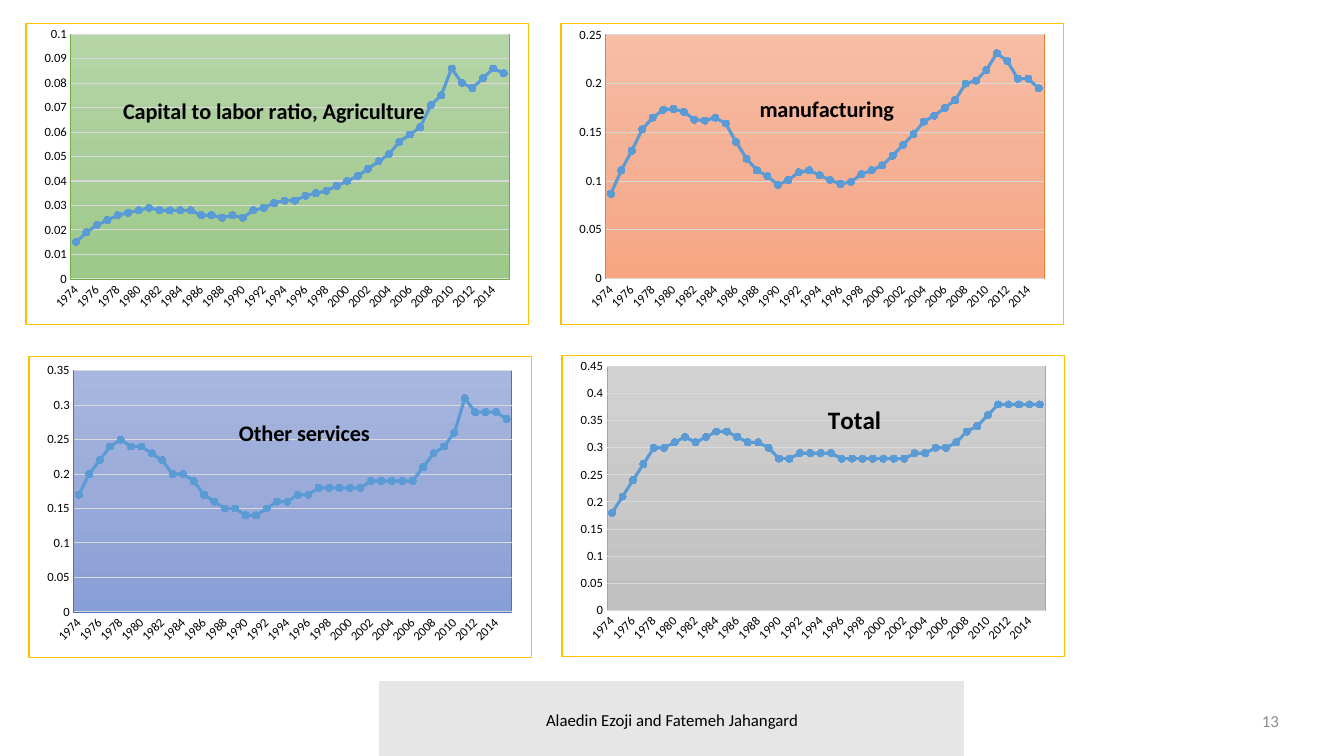
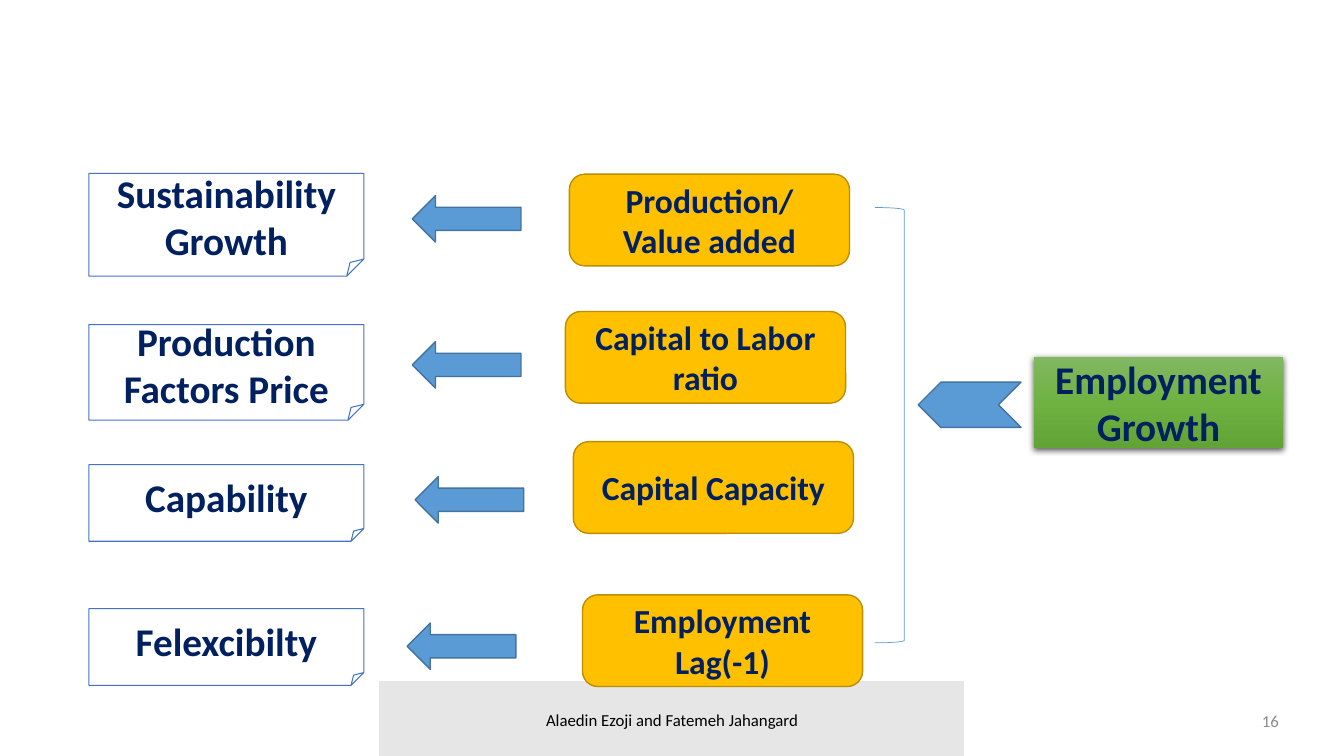
from dataclasses import dataclass

from pptx import Presentation
from pptx import util as u
from pptx.chart import data
from pptx.dml import color
from pptx.enum import chart as charts, shapes, text
from pptx.oxml import parse_xml
from pptx.oxml import ns


@dataclass(frozen=True)
class Theme:
    font: str = "Calibri"
    black: str = "000000"
    navy: str = "002060"
    grey: str = "8C8C8C"
    band: str = "E7E6E6"
    rule: str = "D9D9D9"
    white: str = "FFFFFF"
    gold: str = "FFC000"
    gold_edge: str = "BD8E00"
    blue: str = "5B9BD5"
    blue_edge: str = "43739E"
    note_edge: str = "4472C4"
    greens: tuple = ("81B861", "6FB242", "62A336")
    axis_size: int = 9
    chart_size: int = 10
    footer_size: int = 12
    factor_size: int = 24
    outcome_size: int = 28


@dataclass(frozen=True)
class Box:
    left: float
    top: float
    width: float
    height: float

    def inner(self, left, top, width, height):
        return Box(self.left + left, self.top + top, width, height)

    def lengths(self):
        return [u.Cm(side) for side in (self.left, self.top, self.width, self.height)]


@dataclass(frozen=True)
class Panel:
    title: str
    title_size: int
    title_at: tuple
    box: Box
    plot: tuple
    shades: tuple
    edge: str
    top_value: float
    step: float
    values: tuple


@dataclass(frozen=True)
class Row:
    outcome: str
    factor: str
    box: Box
    arrow_at: tuple
    factor_at: tuple


THEME = Theme()
PAGE = Box(0, 0, 33.87, 19.05)
YEARS = [str(year) for year in range(1974, 2016)]

PANELS = (
    Panel("Capital to labor ratio, Agriculture", 16, (0.185, 0.225),
          Box(0.64, 0.58, 12.7, 7.62), (0.089, 0.035, 0.872, 0.813),
          ("B5D5A7", "AACE9A", "9CC987"), "70AD47", 0.1, 0.01,
          (0.015, 0.019, 0.022, 0.024, 0.026, 0.027, 0.028, 0.029, 0.028, 0.028, 0.028,
           0.028, 0.026, 0.026, 0.025, 0.026, 0.025, 0.028, 0.029, 0.031, 0.032, 0.032,
           0.034, 0.035, 0.036, 0.038, 0.04, 0.042, 0.045, 0.048, 0.051, 0.056, 0.059,
           0.062, 0.071, 0.075, 0.086, 0.08, 0.078, 0.082, 0.086, 0.084)),
    Panel("Other services", 16, (0.41, 0.19),
          Box(0.71, 8.97, 12.7, 7.62), (0.089, 0.047, 0.872, 0.801),
          ("A8B7DF", "9AABD9", "889ED7"), "4472C4", 0.35, 0.05,
          (0.17, 0.2, 0.22, 0.24, 0.25, 0.24, 0.24, 0.23, 0.22, 0.2, 0.2, 0.19, 0.17, 0.16,
           0.15, 0.15, 0.14, 0.14, 0.15, 0.16, 0.16, 0.17, 0.17, 0.18, 0.18, 0.18, 0.18,
           0.18, 0.19, 0.19, 0.19, 0.19, 0.19, 0.21, 0.23, 0.24, 0.26, 0.31, 0.29, 0.29,
           0.29, 0.28)),
    Panel("manufacturing", 16, (0.387, 0.22),
          Box(14.12, 0.58, 12.7, 7.62), (0.089, 0.037, 0.872, 0.81),
          ("F7BDA5", "F5B196", "F8A582"), "ED7D31", 0.25, 0.05,
          (0.087, 0.111, 0.131, 0.153, 0.165, 0.173, 0.174, 0.171, 0.163, 0.162, 0.165,
           0.159, 0.14, 0.123, 0.111, 0.105, 0.096, 0.101, 0.109, 0.111, 0.106, 0.101,
           0.097, 0.099, 0.107, 0.111, 0.116, 0.126, 0.137, 0.148, 0.161, 0.167, 0.175,
           0.183, 0.2, 0.203, 0.214, 0.231, 0.223, 0.205, 0.205, 0.195)),
    Panel("Total", 18, (0.52, 0.14),
          Box(14.15, 8.94, 12.7, 7.62), (0.089, 0.037, 0.872, 0.81),
          ("D2D2D2", "C8C8C8", "C0C0C0"), "A5A5A5", 0.45, 0.05,
          (0.18, 0.21, 0.24, 0.27, 0.3, 0.3, 0.31, 0.32, 0.31, 0.32, 0.33, 0.33, 0.32, 0.31,
           0.31, 0.3, 0.28, 0.28, 0.29, 0.29, 0.29, 0.29, 0.28, 0.28, 0.28, 0.28, 0.28,
           0.28, 0.28, 0.29, 0.29, 0.3, 0.3, 0.31, 0.33, 0.34, 0.36, 0.38, 0.38, 0.38,
           0.38, 0.38)),
)

ROWS = (
    Row("Sustainability Growth", "Production/ Value added",
        Box(2.24, 4.37, 6.93, 2.59), (8.15, 0.56), (12.11, 0.02)),
    Row("Production Factors Price", "Capital to Labor ratio",
        Box(2.24, 8.18, 6.93, 2.41), (8.15, 0.43), (12.01, -0.33)),
    Row("Capability", "Capital Capacity",
        Box(2.24, 11.71, 6.93, 1.93), (8.22, 0.3), (12.21, -0.58)),
    Row("Felexcibilty", "Employment Lag(-1)",
        Box(2.24, 15.34, 6.93, 1.93), (8.02, 0.36), (12.44, -0.35)),
)


def rgb(code):
    return color.RGBColor.from_string(code)


def set_font(font, size, code, bold=False):
    font.name = THEME.font
    font.size = u.Pt(size)
    font.bold = bold
    font.color.rgb = rgb(code)


def gradient(shades):
    stops = "".join(
        f'<a:gs pos="{index * 50000}"><a:srgbClr val="{code}"/></a:gs>'
        for index, code in enumerate(shades))
    return (f'<a:gradFill {ns.nsdecls("a")} rotWithShape="1"><a:gsLst>{stops}</a:gsLst>'
            '<a:lin ang="5400000" scaled="0"/></a:gradFill>')


def frame_style(fill, edge, points):
    return parse_xml(
        f'<c:spPr {ns.nsdecls("c", "a")}>{fill}<a:ln w="{u.Pt(points)}"><a:solidFill>'
        f'<a:srgbClr val="{edge}"/></a:solidFill></a:ln></c:spPr>')


def set_layout(element, sides, target=""):
    for old in element.xpath("c:layout"):
        element.remove(old)
    modes = "".join(f'<c:{side}Mode val="edge"/>' for side in "xy")
    places = "".join(f'<c:{side} val="{value}"/>' for side, value in zip("xywh", sides))
    layout = parse_xml(f'<c:layout {ns.nsdecls("c")}><c:manualLayout>{target}{modes}{places}'
                       '</c:manualLayout></c:layout>')
    element.insert(len(element.xpath("c:tx")), layout)


def write(shape, words, size, code, bold=False, align=text.PP_ALIGN.CENTER,
          anchor=text.MSO_ANCHOR.MIDDLE):
    frame = shape.text_frame
    frame.word_wrap = True
    frame.vertical_anchor = anchor
    frame.text = words
    para = frame.paragraphs[0]
    para.alignment = align
    for span in para.runs:
        set_font(span.font, size, code, bold)


def add_block(page, kind, box, fill=None, edge=None, points=1):
    block = page.shapes.add_shape(kind, *box.lengths())
    block.shadow.inherit = False
    if fill:
        block.fill.solid()
        block.fill.fore_color.rgb = rgb(fill)
    else:
        block.fill.background()
    if edge:
        block.line.color.rgb = rgb(edge)
        block.line.width = u.Pt(points)
    else:
        block.line.fill.background()
    return block


def add_footer(page, box, number):
    add_block(page, shapes.MSO_SHAPE.RECTANGLE, box.inner(9.58, 17.17, 14.71, 2.06),
              THEME.band, THEME.band)
    authors = page.shapes.add_textbox(*box.inner(11.76, 17.75, 10.36, 0.76).lengths())
    write(authors, "Alaedin Ezoji and Fatemeh Jahangard", THEME.footer_size, THEME.black,
          anchor=text.MSO_ANCHOR.TOP)
    counter = page.shapes.add_textbox(*box.inner(31.55, 17.65, 1.37, 1.02).lengths())
    write(counter, str(number), THEME.footer_size, THEME.grey, align=text.PP_ALIGN.LEFT)


def style_axes(chart, panel):
    years, ratios = chart.category_axis, chart.value_axis
    for axis in (years, ratios):
        axis.major_tick_mark = axis.minor_tick_mark = charts.XL_TICK_MARK.NONE
        set_font(axis.tick_labels.font, THEME.axis_size, THEME.black)
    years.format.line.color.rgb = rgb(THEME.rule)
    years.format.line.width = u.Pt(0.75)
    years._element.xpath("c:txPr/a:bodyPr")[0].set("rot", "-2700000")
    skip = parse_xml(f'<c:tickLblSkip {ns.nsdecls("c")} val="2"/>')
    years._element.xpath("c:noMultiLvlLbl")[0].addprevious(skip)

    ratios.format.line.fill.background()
    ratios.has_major_gridlines = True
    ratios.major_gridlines.format.line.color.rgb = rgb(THEME.rule)
    ratios.major_gridlines.format.line.width = u.Pt(0.75)
    if not ratios._element.xpath("c:crossBetween"):
        between = parse_xml(f'<c:crossBetween {ns.nsdecls("c")} val="between"/>')
        ratios._element.xpath("c:crosses")[0].addnext(between)
    ratios.minimum_scale = 0
    ratios.maximum_scale = panel.top_value
    ratios.major_unit = panel.step
    ratios.tick_labels.number_format = "General"
    ratios.tick_labels.number_format_is_linked = False


def add_panel(page, panel):
    figures = data.CategoryChartData()
    figures.categories = YEARS
    figures.add_series("Series 1", panel.values)
    chart = page.shapes.add_chart(charts.XL_CHART_TYPE.LINE_MARKERS, *panel.box.lengths(),
                                  figures).chart
    chart.has_legend = False
    set_font(chart.font, THEME.chart_size, THEME.black)
    style_axes(chart, panel)

    chart.has_title = True
    title = chart.chart_title
    title.text_frame.text = panel.title
    set_font(title.text_frame.paragraphs[0].runs[0].font, panel.title_size, THEME.black, True)
    set_layout(title._element, panel.title_at)
    for overlay in title._element.xpath("c:overlay"):
        overlay.set("val", "1")

    chart.plots[0].vary_by_categories = False
    series = chart.plots[0].series[0]
    series.smooth = False
    series.format.line.color.rgb = rgb(THEME.blue)
    series.format.line.width = u.Pt(2.25)
    series.marker.style = charts.XL_MARKER_STYLE.CIRCLE
    series.marker.size = 5
    series.marker.format.fill.solid()
    series.marker.format.fill.fore_color.rgb = rgb(THEME.blue)
    series.marker.format.line.color.rgb = rgb(THEME.blue)

    area = chart._chartSpace.xpath("c:chart/c:plotArea")[0]
    set_layout(area, panel.plot, '<c:layoutTarget val="inner"/>')
    area.append(frame_style(gradient(panel.shades), panel.edge, 0.5))
    white = f'<a:solidFill><a:srgbClr val="{THEME.white}"/></a:solidFill>'
    chart._chartSpace.xpath("c:chart")[0].addnext(frame_style(white, THEME.gold, 1))


def add_row(page, row):
    note = add_block(page, shapes.MSO_SHAPE.FOLDED_CORNER, row.box,
                     edge=THEME.note_edge, points=0.75)
    write(note, row.outcome, THEME.outcome_size, THEME.navy, True)
    add_block(page, shapes.MSO_SHAPE.LEFT_ARROW, row.box.inner(*row.arrow_at, 2.74, 1.17),
              THEME.blue, THEME.blue_edge)
    factor = add_block(page, shapes.MSO_SHAPE.ROUNDED_RECTANGLE,
                       row.box.inner(*row.factor_at, 7.06, 2.31), THEME.gold, THEME.gold_edge)
    write(factor, row.factor, THEME.factor_size, THEME.navy, True)


def add_source(page, box):
    add_block(page, shapes.MSO_SHAPE.RIGHT_BRACKET, box.inner(0, 0, 0.74, box.height),
              edge=THEME.blue, points=0.5)
    growth = add_block(page, shapes.MSO_SHAPE.RECTANGLE, box.inner(4.01, 3.76, 6.27, 2.31))
    style = growth._element.spPr
    style.replace(style.xpath("a:noFill")[0], parse_xml(gradient(THEME.greens)))
    style.xpath("a:effectLst")[0].append(parse_xml(
        f'<a:outerShdw {ns.nsdecls("a")} blurRad="{u.Pt(4.5)}" dist="{u.Pt(1.5)}" '
        f'dir="5400000" algn="ctr" rotWithShape="0"><a:srgbClr val="{THEME.black}">'
        '<a:alpha val="63000"/></a:srgbClr></a:outerShdw>'))
    write(growth, "Employment Growth", THEME.outcome_size, THEME.navy, True)
    chevron = add_block(page, shapes.MSO_SHAPE.CHEVRON, box.inner(1.09, 4.4, 2.59, 1.14),
                        THEME.blue, THEME.blue_edge)
    chevron.rotation = 180


def add_page(deck, number):
    page = deck.slides.add_slide(deck.slide_layouts.get_by_name("Blank"))
    add_footer(page, PAGE, number)
    return page


def main():
    deck = Presentation()
    deck.slide_width, deck.slide_height = u.Cm(PAGE.width), u.Cm(PAGE.height)
    ratios = add_page(deck, 13)
    for panel in PANELS:
        add_panel(ratios, panel)
    growth = add_page(deck, 16)
    for row in ROWS:
        add_row(growth, row)
    add_source(growth, Box(22.05, 5.23, 10.28, 10.97))
    deck.save("out.pptx")


if __name__ == "__main__":
    main()
